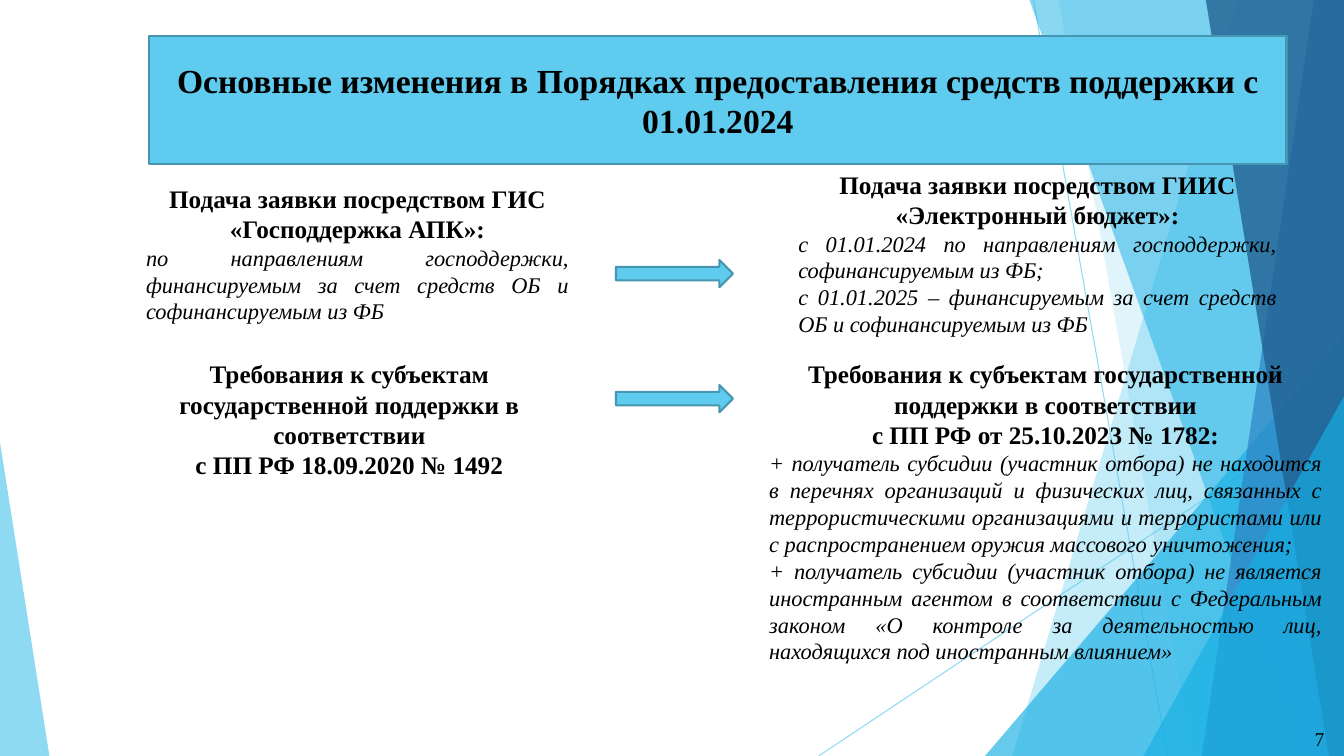
from dataclasses import dataclass

from lxml import etree
from pptx import Presentation
from pptx.dml.color import RGBColor
from pptx.enum.shapes import MSO_CONNECTOR, MSO_SHAPE
from pptx.enum.text import MSO_ANCHOR, MSO_AUTO_SIZE, PP_ALIGN
from pptx.oxml.ns import qn
from pptx.util import Inches, Pt

RIGHT_ARROW = MSO_SHAPE.RIGHT_ARROW
TRIANGLE = MSO_SHAPE.ISOSCELES_TRIANGLE
STRAIGHT = MSO_CONNECTOR.STRAIGHT
CENTER, JUSTIFY, LEFT = PP_ALIGN.CENTER, PP_ALIGN.JUSTIFY, PP_ALIGN.LEFT
MIDDLE, TOP = MSO_ANCHOR.MIDDLE, MSO_ANCHOR.TOP
NO_FIT, GROW = MSO_AUTO_SIZE.NONE, MSO_AUTO_SIZE.SHAPE_TO_FIT_TEXT

WIDTH, HEIGHT = 13.33, 7.5


@dataclass(frozen=True)
class Theme:
    font: str = "Times New Roman"
    text: str = "000000"
    sky: str = "5FCBEF"
    cyan: str = "17B0E4"
    blue: str = "2E83C3"
    navy: str = "226292"
    outline: str = "4696B1"
    title_size: int = 24
    heading_size: int = 18
    detail_size: int = 16
    number_size: int = 14
    border: float = 1.5
    hairline: float = 0.75


class SlideBuilder:
    def __init__(self, prs, theme):
        self.theme = theme
        self.s = prs.slides.add_slide(prs.slide_layouts[5])
        self.styles = {
            "title": (CENTER, {"size": Pt(theme.title_size), "bold": True}),
            "heading": (CENTER, {"size": Pt(theme.heading_size), "bold": True}),
            "detail": (JUSTIFY, {"size": Pt(theme.detail_size), "italic": True}),
            "number": (LEFT, {"size": Pt(theme.number_size)}),
        }

    def set_opacity(self, sp, percent):
        for color in sp.element.spPr.iter(qn("a:srgbClr")):
            etree.SubElement(color, qn("a:alpha"), val=str(percent * 1000))

    def paint(self, sp, color, opacity=100, outlined=False):
        sp.shadow.inherit = False
        sp.fill.solid()
        sp.fill.fore_color.rgb = RGBColor.from_string(color)
        if outlined:
            sp.line.color.rgb = RGBColor.from_string(self.theme.outline)
            sp.line.width = Pt(self.theme.border)
        else:
            sp.line.fill.background()
        if opacity < 100:
            self.set_opacity(sp, opacity)

    def line(self, start, end, opacity):
        sp = self.s.shapes.add_connector(STRAIGHT, *map(Inches, start + end))
        sp.line.color.rgb = RGBColor.from_string(self.theme.sky)
        sp.line.width = Pt(self.theme.hairline)
        self.set_opacity(sp, opacity)
        etree.SubElement(sp.element.spPr, qn("a:effectLst"))

    def facet(self, top_x, bottom_x, color, opacity):
        corners = [(WIDTH, 0), (WIDTH, HEIGHT), (bottom_x, HEIGHT)]
        outline = self.s.shapes.build_freeform(Inches(top_x), 0)
        outline.add_line_segments([(Inches(x), Inches(y)) for x, y in corners])
        self.paint(outline.convert_to_shape(), color, opacity)

    def triangle(self, box, apex, color, opacity):
        sp = self.s.shapes.add_shape(TRIANGLE, *map(Inches, box))
        sp.adjustments[0] = apex
        self.paint(sp, color, opacity)

    def arrow(self, box):
        sp = self.s.shapes.add_shape(RIGHT_ARROW, *map(Inches, box))
        self.paint(sp, self.theme.sky, outlined=True)

    def fill_text(self, tf, paragraphs, **frame):
        for name, value in frame.items():
            setattr(tf, name, value)
        for i, (style, text) in enumerate(paragraphs):
            p = tf.add_paragraph() if i else tf.paragraphs[0]
            p.alignment, fmt = self.styles[style]
            r = p.add_run()
            r.text = text
            for name, value in {"name": self.theme.font, **fmt}.items():
                setattr(r.font, name, value)
            r.font.color.rgb = RGBColor.from_string(self.theme.text)

    def title(self, box, text):
        sp = self.s.shapes.title
        sp.element.getparent().append(sp.element)
        sp.left, sp.top, sp.width, sp.height = map(Inches, box)
        self.paint(sp, self.theme.sky, outlined=True)
        self.fill_text(sp.text_frame, [("title", text)], word_wrap=True,
                       auto_size=NO_FIT, vertical_anchor=MIDDLE)

    def text(self, box, paragraphs, wrap=True):
        sp = self.s.shapes.add_textbox(*map(Inches, box))
        self.fill_text(sp.text_frame, paragraphs, word_wrap=wrap,
                       auto_size=GROW, vertical_anchor=TOP)


def add_backdrop(slide, theme):
    slide.line((10.25, 0), (11.58, HEIGHT), 70)
    slide.line((WIDTH, 4.03), (8.12, HEIGHT), 70)
    slide.facet(12.28, 10.04, theme.sky, 36)
    slide.facet(10.5, 11.83, theme.sky, 20)
    slide.triangle((9.77, 3.33, 3.56, 4.17), 1, theme.cyan, 66)
    slide.facet(10.21, 12.91, theme.cyan, 50)
    slide.facet(13.03, 11.92, theme.blue, 70)
    slide.facet(11.96, 13.18, theme.navy, 80)
    slide.triangle((11.34, 3.93, 1.99, 3.57), 1, theme.cyan, 66)
    slide.triangle((0, 4.39, 0.49, 3.11), 0, theme.sky, 70)


def main():
    prs = Presentation()
    prs.slide_width, prs.slide_height = Inches(WIDTH), Inches(HEIGHT)
    theme = Theme()
    slide = SlideBuilder(prs, theme)
    add_backdrop(slide, theme)
    slide.title((1.48, 0.36, 11.28, 1.27),
                "Основные изменения в Порядках предоставления средств поддержки с 01.01.2024")

    requirements = ("heading", "Требования к субъектам государственной поддержки в соответствии")
    blocks = [
        ((1.35, 1.77, 4.39, 1.51), [
            ("heading", "Подача заявки посредством ГИС «Господдержка АПК»:"),
            ("detail", "по направлениям господдержки, финансируемым за счет средств ОБ "
                       "и софинансируемым из ФБ"),
        ]),
        ((7.82, 1.63, 4.94, 1.78), [
            ("heading", "Подача заявки посредством ГИИС «Электронный бюджет»:"),
            ("detail", "с 01.01.2024 по направлениям господдержки, софинансируемым из ФБ;"),
            ("detail", "с 01.01.2025 – финансируемым за счет средств ОБ и софинансируемым из ФБ"),
        ]),
        ((7.53, 3.51, 5.68, 3.16), [
            requirements,
            ("heading", "с ПП РФ от 25.10.2023 № 1782:"),
            ("detail", "+ получатель субсидии (участник отбора) не находится в перечнях "
                       "организаций и физических лиц, связанных с террористическими "
                       "организациями и террористами или с распространением оружия "
                       "массового уничтожения;"),
            ("detail", "+ получатель субсидии (участник отбора) не является иностранным "
                       "агентом в соответствии с Федеральным законом «О контроле за "
                       "деятельностью лиц, находящихся под иностранным влиянием»"),
        ]),
        ((1.48, 3.51, 3.97, 1.31), [
            requirements,
            ("heading", "с ПП РФ 18.09.2020 № 1492"),
        ]),
    ]
    for box, paragraphs in blocks:
        slide.text(box, paragraphs)
    for top in (2.58, 3.82):
        slide.arrow((6.11, top, 1.16, 0.27))
    slide.text((12.94, 7.16, 0.3, 0.34), [("number", "7")], wrap=False)
    prs.save("out.pptx")


if __name__ == "__main__":
    main()
